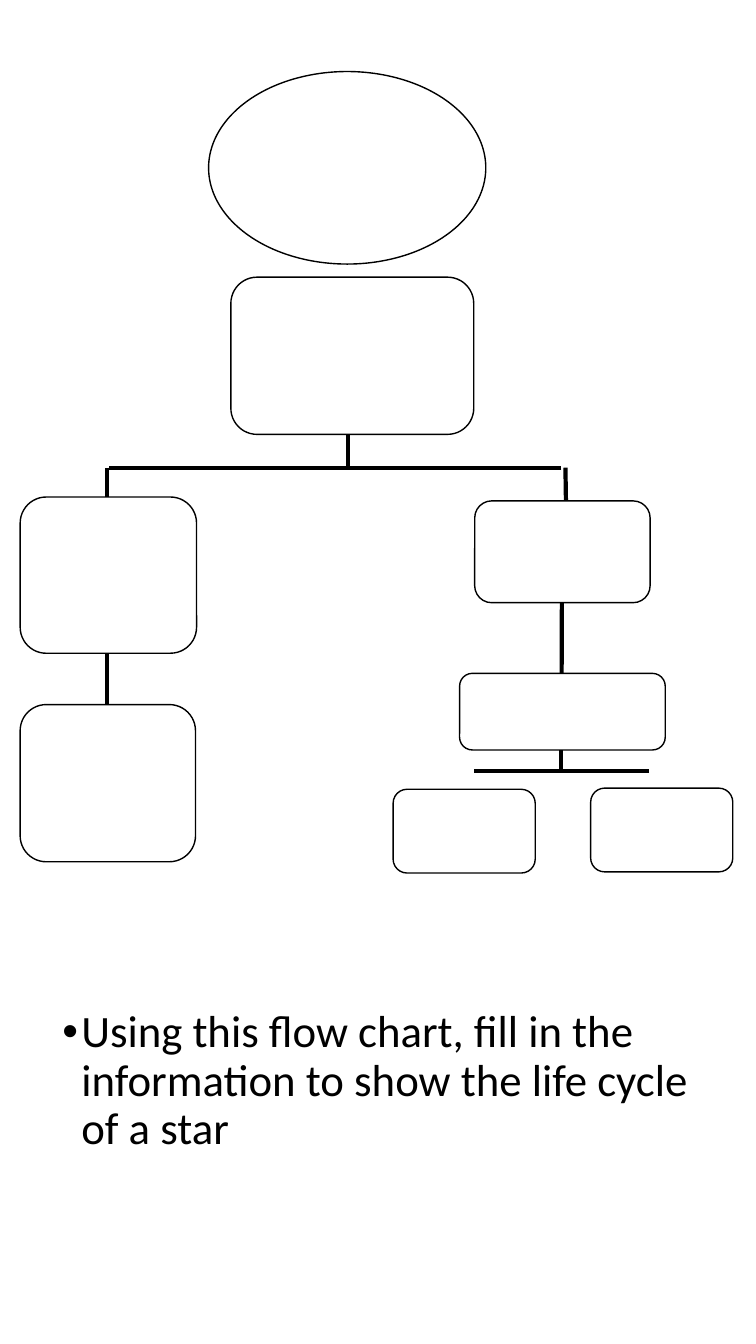
from pptx import Presentation
from pptx.dml.color import RGBColor
from pptx.enum.shapes import MSO_CONNECTOR, MSO_SHAPE
from pptx.enum.text import MSO_ANCHOR
from pptx.oxml.ns import qn
from pptx.util import Pt
from lxml.etree import SubElement

PAGE_SIZE = (540, 960)
BLACK, WHITE = "000000", "FFFFFF"
INSTRUCTION = ("Using this flow chart, fill in the information "
               "to show the life cycle of a star")
INSTRUCTION_AREA = (37.4, 717.1, 465.8, 147.6)

# Left, top, width, height
TOP_OVAL = (149, 51.1, 198, 137.5)
ROUNDED_BOXES = [
    (164.9, 198, 173.5, 112.3),     # above the fork
    (14.4, 355, 126, 111.6),        # left branch
    (14.4, 503.3, 125.3, 112.3),
    (339.1, 357.8, 125.3, 72.7),    # right branch
    (328.3, 481, 146.9, 54.7),
    (280.8, 563.8, 101.5, 59.8),    # bottom pair
    (421.9, 563, 101.5, 59.8),
]

# Start x, start y, end x, end y; ends may lie behind the boxes
UPPER_FORK_Y, LOWER_FORK_Y = 334.1, 550.8
LINKS = [
    (248.4, 287.3, 248.4, UPPER_FORK_Y),
    (401, UPPER_FORK_Y, 77.8, UPPER_FORK_Y),
    (76.3, UPPER_FORK_Y, 76.3, 380.2),
    (76.3, 410.4, 76.3, 556.6),
    (403.9, UPPER_FORK_Y, 404.6, 380.2),
    (401.4, 419, 401, 524.2),
    (401, 503.3, 401, LOWER_FORK_Y),
    (463.7, LOWER_FORK_Y, 338.4, LOWER_FORK_Y),
]


def color(hex_text):
    return RGBColor.from_string(hex_text)


def points(values):
    return [Pt(value) for value in values]


def add_link(page, ends):
    link = page.shapes.add_connector(MSO_CONNECTOR.STRAIGHT, *points(ends))
    link.line.color.rgb = color(BLACK)
    link.line.width = Pt(3)
    SubElement(link._element.spPr, qn("a:effectLst"))


def add_blank(page, kind, area):
    """Add an outlined white shape to be filled in by hand."""
    blank = page.shapes.add_shape(kind, *points(area))
    blank.shadow.inherit = False
    blank.fill.solid()
    blank.fill.fore_color.rgb = color(WHITE)
    blank.line.color.rgb = color(BLACK)
    blank.line.width = Pt(1)


def add_instruction(page):
    box = page.placeholders[1]
    box.left, box.top, box.width, box.height = points(INSTRUCTION_AREA)
    frame = box.text_frame
    frame.word_wrap = True
    frame.vertical_anchor = MSO_ANCHOR.TOP
    frame.text = INSTRUCTION
    para = frame.paragraphs[0]
    props = para._p.get_or_add_pPr()
    props.set("marL", str(Pt(13.5)))
    props.set("indent", str(-Pt(13.5)))
    para.line_spacing = 0.9
    para.space_before = Pt(0)
    SubElement(props, qn("a:buFont")).set("typeface", "Arial")
    SubElement(props, qn("a:buChar")).set("char", "•")
    para.font.size = Pt(32)
    para.font.name = "Calibri"
    para.font.color.rgb = color(BLACK)


def main():
    deck = Presentation()
    deck.slide_width, deck.slide_height = points(PAGE_SIZE)
    page = deck.slides.add_slide(deck.slide_layouts[1])
    title = page.shapes.title._element
    title.getparent().remove(title)

    add_instruction(page)
    for ends in LINKS:
        add_link(page, ends)
    add_blank(page, MSO_SHAPE.OVAL, TOP_OVAL)
    for area in ROUNDED_BOXES:
        add_blank(page, MSO_SHAPE.ROUNDED_RECTANGLE, area)
    deck.save("out.pptx")


if __name__ == "__main__":
    main()
